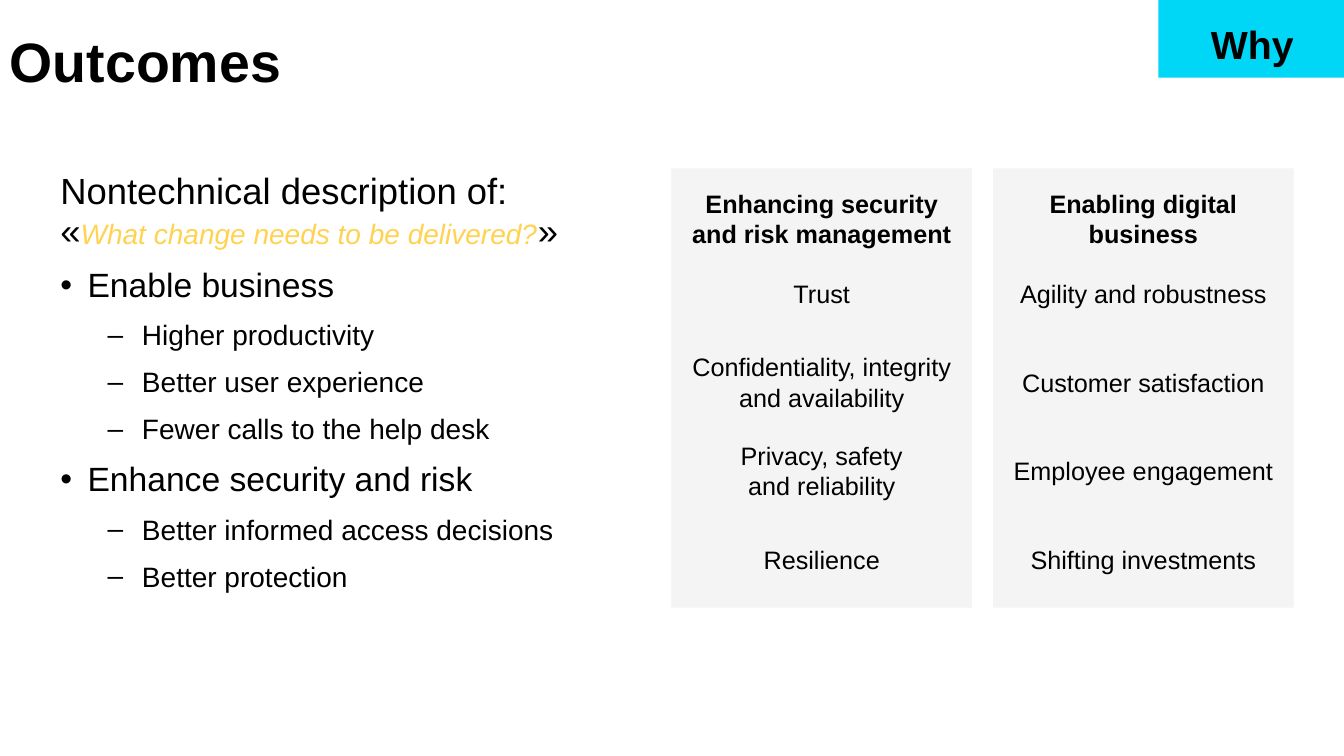
from lxml.etree import SubElement as Sub
from pptx import Presentation as Deck
from pptx.dml.color import RGBColor as RGB
from pptx.enum.shapes import MSO_SHAPE as Kind
from pptx.enum.text import MSO_ANCHOR as Anchor, PP_ALIGN as Align
from pptx.oxml.ns import qn
from pptx.util import Inches, Pt

INK = {"text": "000000", "cyan": "00D7F7", "gold": "FFD351", "pale": "F4F4F4"}


class Page:
    font = "Arial"

    def __init__(self, deck):
        self.slide = deck.slides.add_slide(deck.slide_layouts[6])

    def frame(self, shape, inset, anchor):
        frame = shape.text_frame
        frame.word_wrap = True
        frame.vertical_anchor = anchor
        left, top, right, low = (Inches(n) for n in inset)
        frame.margin_left, frame.margin_top = left, top
        frame.margin_right, frame.margin_bottom = right, low
        return frame

    def text(self, box, inset=(0.1, 0.05, 0.1, 0.05), anchor=Anchor.TOP):
        shape = self.slide.shapes.add_textbox(*(Inches(n) for n in box))
        return self.frame(shape, inset, anchor)

    def block(self, box, fill, inset):
        shape = self.slide.shapes.add_shape(Kind.RECTANGLE, *(Inches(n) for n in box))
        shape.shadow.inherit = False
        shape.fill.solid()
        shape.fill.fore_color.rgb = RGB.from_string(INK[fill])
        shape.line.fill.background()
        return self.frame(shape, inset, Anchor.TOP)

    def para(self, frame, align=Align.LEFT, space=None, gap=0):
        first = frame.paragraphs[0]
        para = frame.add_paragraph() if first.runs else first
        para.alignment = align
        if space:
            para.line_spacing = space
        para.space_before = Pt(gap)
        return para

    def mark(self, para, sign, left, hang):
        props = para._p.get_or_add_pPr()
        props.set("marL", str(Inches(left)))
        props.set("indent", str(-Inches(hang)))
        Sub(props, qn("a:buFont")).set("typeface", self.font)
        Sub(props, qn("a:buChar")).set("char", sign)

    def run(self, para, words, size, color="text", bold=False, slant=False):
        for num, line in enumerate(words.split("\n")):
            if num:
                para.add_line_break()
            run = para.add_run()
            run.text = line
            font = run.font
            font.name, font.size = self.font, Pt(size)
            font.bold, font.italic = bold, slant
            font.color.rgb = RGB.from_string(INK[color])


def main():
    deck = Deck()
    deck.slide_width, deck.slide_height = Inches(13.33), Inches(7.5)
    page = Page(deck)

    title = page.text((0, 0.4, 12.33, 0.48), anchor=Anchor.MIDDLE)
    page.run(page.para(title, space=0.9), "Outcomes", 39.6, bold=True)

    body = page.text((0.5, 1.67, 6.01, 4.88))
    lead = page.para(body, space=0.9)
    page.run(lead, "Nontechnical description of:\n«", 26)
    page.run(lead, "What change needs to be delivered?", 20, "gold", slant=True)
    page.run(lead, "»", 26)
    goals = {
        "Enable business": [
            "Higher productivity",
            "Better user experience",
            "Fewer calls to the help desk",
        ],
        "Enhance security and risk": [
            "Better informed access decisions",
            "Better protection",
        ],
    }
    for goal, gains in goals.items():
        para = page.para(body, space=0.9, gap=12)
        page.mark(para, "•", 0.27, 0.27)
        page.run(para, goal, 24)
        for gain in gains:
            para = page.para(body, space=0.9, gap=12)
            para.level = 1
            page.mark(para, "–", 0.81, 0.34)
            page.run(para, gain, 20)

    tag = page.block((11.49, 0, 1.84, 0.77), "cyan", (0, 0.2, 0.5, 0.05))
    page.run(page.para(tag, Align.RIGHT), "Why", 28, bold=True)

    panels = {
        "Enhancing security and risk management": [
            "Trust",
            "Confidentiality, integrity and availability",
            "Privacy, safety\nand reliability",
            "Resilience",
        ],
        "Enabling digital business": [
            "Agility and robustness",
            "Customer satisfaction",
            "Employee engagement",
            "Shifting investments",
        ],
    }
    for col, (head, items) in enumerate(panels.items()):
        left = 6.66 + 3.19 * col
        panel = page.block((left, 1.67, 2.98, 4.36), "pale", (0.1, 0.2, 0.1, 0.05))
        page.run(page.para(panel, Align.CENTER), head, 18, bold=True)
        for row, item in enumerate(items):
            box = (left + 0.06, 2.61 + 0.88 * row, 2.86, 0.6)
            cell = page.text(box, (0, 0, 0, 0), Anchor.MIDDLE)
            page.run(page.para(cell, Align.CENTER), item, 18)

    deck.save("out.pptx")


if __name__ == "__main__":
    main()
